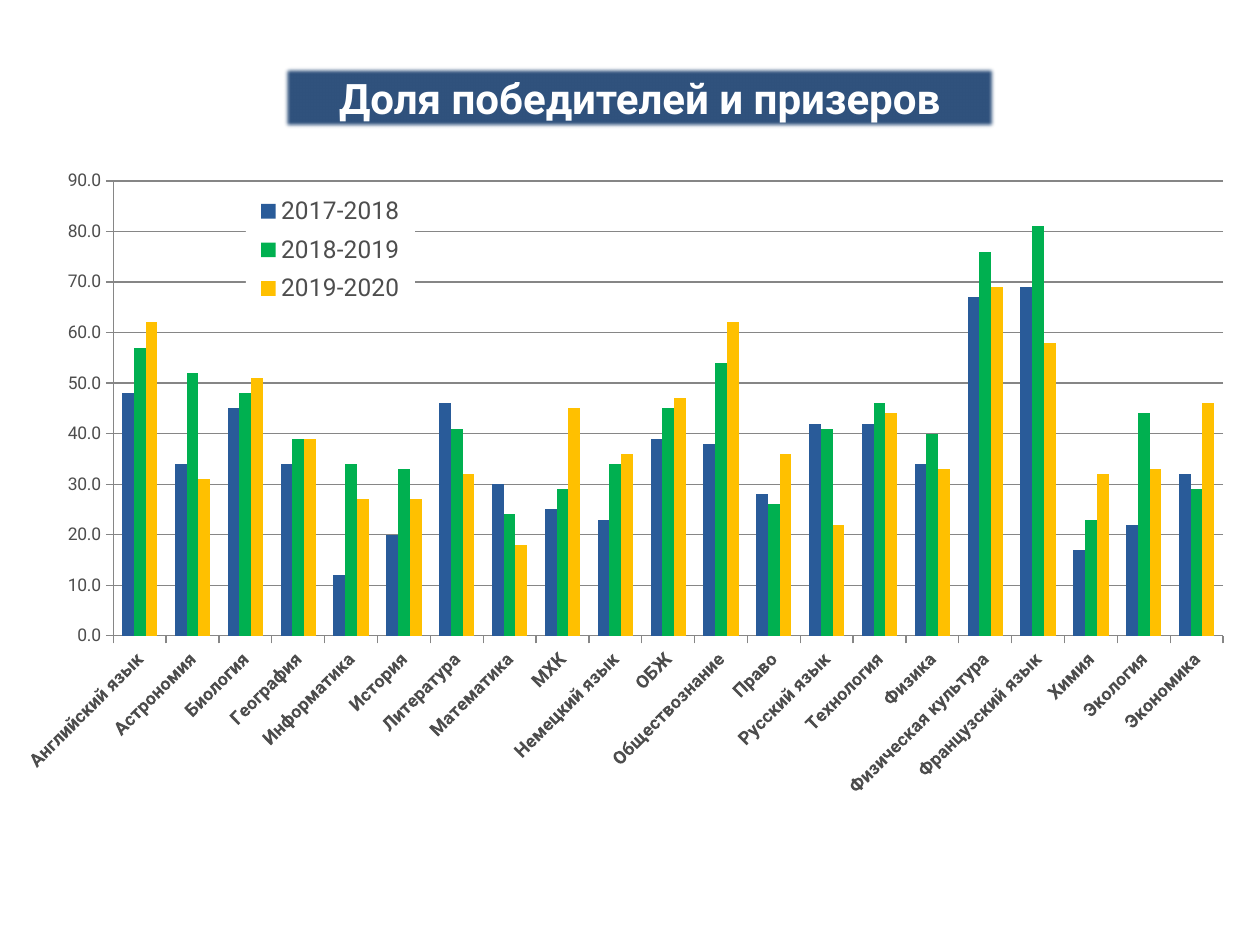
from dataclasses import dataclass

from lxml.etree import SubElement
from pptx import Presentation
from pptx.chart.data import CategoryChartData
from pptx.dml.color import RGBColor
from pptx.enum.chart import XL_CHART_TYPE, XL_LEGEND_POSITION, XL_TICK_MARK
from pptx.enum.shapes import MSO_SHAPE
from pptx.enum.text import MSO_ANCHOR, PP_ALIGN
from pptx.oxml import parse_xml
from pptx.oxml.ns import nsdecls, qn
from pptx.util import Cm, Pt


@dataclass(frozen=True)
class Theme:
    font: str = "Roboto"
    banner: RGBColor = RGBColor(0x30, 0x52, 0x7D)
    white: RGBColor = RGBColor(0xFF, 0xFF, 0xFF)
    text: RGBColor = RGBColor(0x4D, 0x4D, 0x4D)
    line: RGBColor = RGBColor(0x86, 0x86, 0x86)
    series: tuple = (
        RGBColor(0x29, 0x5B, 0x99),
        RGBColor(0x00, 0xB0, 0x50),
        RGBColor(0xFF, 0xC0, 0x00),
    )
    title_size: Pt = Pt(24)
    legend_size: Pt = Pt(14)
    subject_size: Pt = Pt(10.5)
    chart_size: Pt = Pt(10)


THEME = Theme()

SUBJECTS = [
    "Английский язык", "Астрономия", "Биология", "География", "Информатика",
    "История", "Литература", "Математика", "МХК", "Немецкий язык", "ОБЖ",
    "Обществознание", "Право", "Русский язык", "Технология", "Физика",
    "Физическая культура", "Французский язык", "Химия", "Экология", "Экономика",
]
SHARES = {
    "2017-2018": [48, 34, 45, 34, 12, 20, 46, 30, 25, 23, 39,
                  38, 28, 42, 42, 34, 67, 69, 17, 22, 32],
    "2018-2019": [57, 52, 48, 39, 34, 33, 41, 24, 29, 34, 45,
                  54, 26, 41, 46, 40, 76, 81, 23, 44, 29],
    "2019-2020": [62, 31, 51, 39, 27, 27, 32, 18, 45, 36, 47,
                  62, 36, 22, 44, 33, 69, 58, 32, 33, 46],
}


def style_font(font, size, color, bold=False):
    font.name = THEME.font
    font.size = size
    font.bold = bold
    font.color.rgb = color


def manual_layout(left, top, width, height, inner=False):
    """Return a c:layout element given in fractions of the chart."""
    target = '<c:layoutTarget val="inner"/>' if inner else ""
    return parse_xml(
        f'<c:layout {nsdecls("c")}><c:manualLayout>{target}'
        '<c:xMode val="edge"/><c:yMode val="edge"/>'
        f'<c:x val="{left}"/><c:y val="{top}"/>'
        f'<c:w val="{width}"/><c:h val="{height}"/>'
        "</c:manualLayout></c:layout>"
    )


def replace_layout(parent, layout, index):
    for old in parent.findall(qn("c:layout")):
        parent.remove(old)
    parent.insert(index, layout)


def add_title(page, left, top, width, height):
    box = page.shapes.add_shape(MSO_SHAPE.RECTANGLE, left, top, width, height)
    box.shadow.inherit = False
    box.fill.solid()
    box.fill.fore_color.rgb = THEME.banner
    box.line.fill.background()
    effects = box._element.spPr.find(qn("a:effectLst"))
    SubElement(effects, qn("a:softEdge"), rad="31750")

    frame = box.text_frame
    frame.word_wrap = True
    frame.vertical_anchor = MSO_ANCHOR.MIDDLE
    para = frame.paragraphs[0]
    para.alignment = PP_ALIGN.CENTER
    span = para.add_run()
    span.text = "Доля победителей и призеров"
    style_font(span.font, THEME.title_size, THEME.white, bold=True)


def style_axes(chart):
    subjects, shares = chart.category_axis, chart.value_axis
    for axis in (subjects, shares):
        axis.major_tick_mark = XL_TICK_MARK.OUTSIDE
        axis.format.line.color.rgb = THEME.line
        axis.format.line.width = Pt(0.75)
    style_font(subjects.tick_labels.font, THEME.subject_size, THEME.text, bold=True)
    body = subjects._element.find(qn("c:txPr")).find(qn("a:bodyPr"))
    body.set("rot", "-2700000")
    body.set("vert", "horz")

    shares.minimum_scale = 0
    shares.maximum_scale = 90
    shares.major_unit = 10
    shares.tick_labels.number_format = "0.0"
    shares.tick_labels.number_format_is_linked = False
    style_font(shares.tick_labels.font, THEME.chart_size, THEME.text)
    shares.has_major_gridlines = True
    shares.major_gridlines.format.line.color.rgb = THEME.line
    shares.major_gridlines.format.line.width = Pt(0.75)


def style_legend(chart):
    chart.has_legend = True
    legend = chart.legend
    legend.position = XL_LEGEND_POSITION.RIGHT
    legend.include_in_layout = False
    style_font(legend.font, THEME.legend_size, THEME.text)
    element = legend._element
    replace_layout(element, manual_layout(0.18, 0.04, 0.14, 0.18), 1)
    element.find(qn("c:txPr")).addprevious(parse_xml(
        f'<c:spPr {nsdecls("c", "a")}><a:solidFill>'
        f'<a:srgbClr val="{THEME.white}"/></a:solidFill></c:spPr>'
    ))


def add_share_chart(page, left, top, width, height):
    data = CategoryChartData(number_format="0.0")
    data.categories = SUBJECTS
    for year, values in SHARES.items():
        data.add_series(year, values)
    chart = page.shapes.add_chart(
        XL_CHART_TYPE.COLUMN_CLUSTERED, left, top, width, height, data
    ).chart
    chart.has_title = False
    style_font(chart.font, THEME.chart_size, THEME.text)

    plot = chart.plots[0]
    plot.vary_by_categories = False
    plot.gap_width = 150
    plot.overlap = 0
    for series, color in zip(plot.series, THEME.series):
        series.format.fill.solid()
        series.format.fill.fore_color.rgb = color
    plot_area = chart._chartSpace.chart.plotArea
    replace_layout(plot_area, manual_layout(0.07, 0.03, 0.92, 0.66, inner=True), 0)

    style_axes(chart)
    style_legend(chart)


def main():
    deck = Presentation()
    deck.slide_width = Cm(25.4)
    deck.slide_height = Cm(19.05)
    page = deck.slides.add_slide(deck.slide_layouts[6])
    add_share_chart(page, Cm(0.5), Cm(3.23), Cm(24.4), Cm(13.9))
    add_title(page, Cm(5.7), Cm(1.33), Cm(14.4), Cm(1.28))
    deck.save("out.pptx")


if __name__ == "__main__":
    main()
